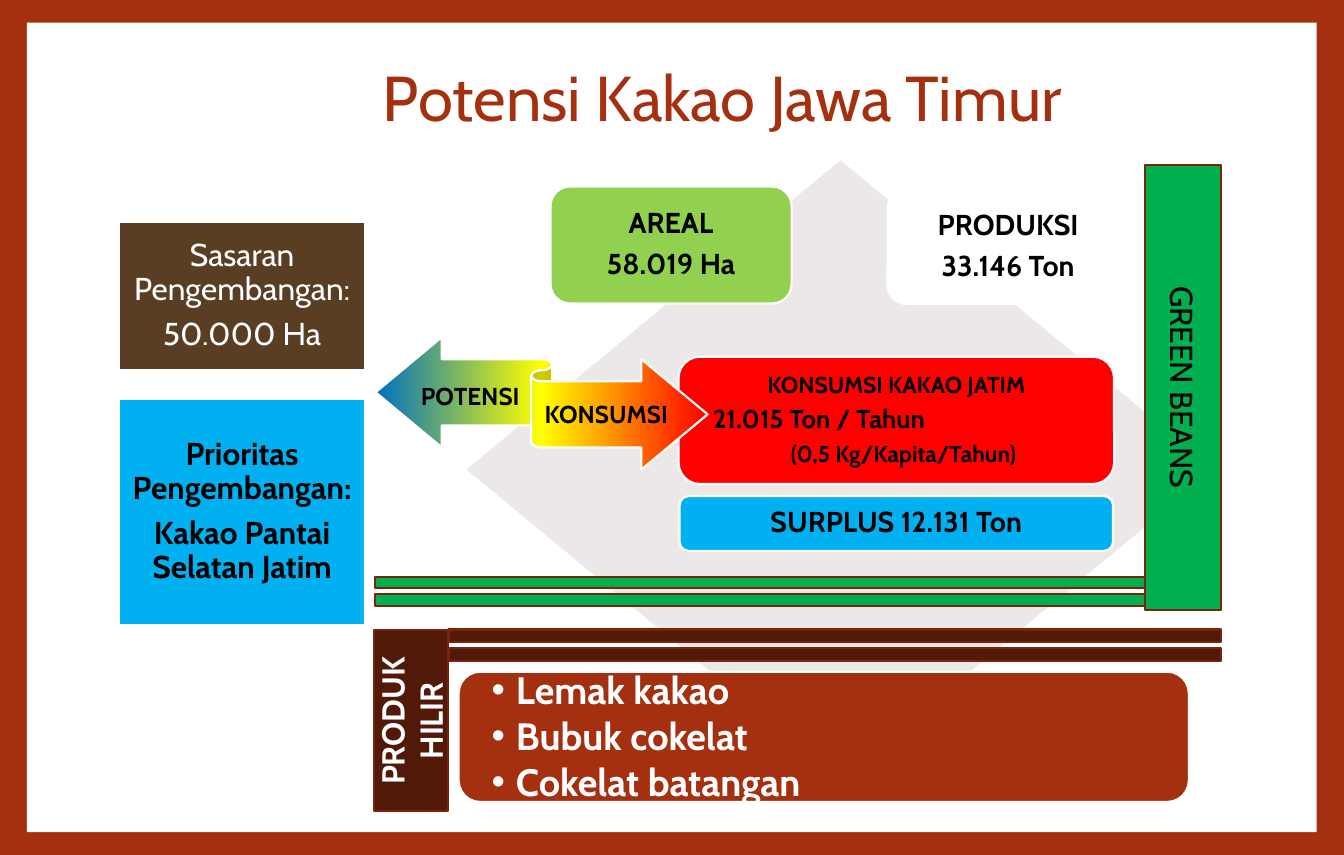
from lxml import etree
from pptx import Presentation
from pptx.dml.color import RGBColor
from pptx.enum import shapes, text
from pptx.oxml import ns
from pptx.util import Pt

FONT = "Cabin"
RUST, DARK_RUST, COCOA = "A5300F", "7A240B", "521808"
WHITE, BLACK, GREEN, BLUE = "FFFFFF", "000000", "00B050", "00B0F0"
KIND = shapes.MSO_SHAPE
ALIGN = text.PP_ALIGN
SLIDE_SIZE = (935.43, 595.28)

# Each shape: kind, (left, top, width, height), fill, line
FRAME = (KIND.RECTANGLE, (18.7, 15.8, 897.8, 563.6), WHITE, None)
DIAMOND = (KIND.DIAMOND, (324.7, 111.6, 520.6, 430.6), "D8D2D1", None)
RIBBON = (KIND.LEFT_RIGHT_RIBBON, (261.4, 234.7, 231.1, 92.2), BLUE, WHITE)
RIBBON_STOPS = [(0, "0070C0"), (50, "FFFF00"), (100, "FF0000")]
GREEN_BARS = (KIND.MATH_EQUAL, (164.2, 394.4, 731.5, 34.6), GREEN, DARK_RUST)
COCOA_BARS = (KIND.MATH_EQUAL, (215.3, 430.6, 731.5, 37.2), COCOA, DARK_RUST)
CONSUMPTION = (KIND.ROUNDED_RECTANGLE, (472.3, 248.4, 303.1, 88.6), "FF0000", WHITE)
PRODUCTS = (KIND.ROUNDED_RECTANGLE, (319.2, 467.7, 508.3, 90.7), RUST, WHITE)
GREEN_BEANS = (KIND.RECTANGLE, (797, 114.9, 52.6, 309.6), GREEN, DARK_RUST)
DOWNSTREAM = (KIND.RECTANGLE, (260.6, 438.9, 51, 126), COCOA, DARK_RUST)

# Shape, lines, size, font colour, bold, inset
CARDS = [
    ((KIND.ROUNDED_RECTANGLE, (383.2, 129.9, 167.8, 81.4), "92D050", WHITE),
     ["AREAL", "58.019 Ha"], 20, BLACK, True, 6),
    ((KIND.ROUNDED_RECTANGLE, (617.8, 131.8, 167.8, 79.9), WHITE, WHITE),
     ["PRODUKSI", "33.146 Ton"], 20, BLACK, True, 6),
    ((KIND.ROUNDED_RECTANGLE, (473, 345.4, 301.7, 38.2), BLUE, WHITE),
     ["SURPLUS 12.131 Ton"], 20, BLACK, True, 6),
    ((KIND.RECTANGLE, (82.8, 154.6, 171.4, 103), "593E24", WHITE),
     ["Sasaran Pengembangan:", "50.000 Ha"], 22, WHITE, False, 6.5),
    ((KIND.RECTANGLE, (82.8, 277.9, 171.4, 157), BLUE, WHITE),
     ["Prioritas Pengembangan:", "Kakao Pantai Selatan Jatim"], 22, BLACK, True, 6.5),
]
CONSUMPTION_LINES = ["KONSUMSI KAKAO JATIM", "21.015 Ton / Tahun", "(0,5 Kg/Kapita/Tahun)"]
PRODUCT_LINES = ["Lemak kakao", "Bubuk cokelat", "Cokelat batangan"]
RIBBON_LABELS = [("POTENSI", (289.2, 254, 76.3, 45.4)),
                 ("KONSUMSI", (377, 266.8, 90, 45.4))]
TITLE = ("Potensi Kakao Jawa Timur", (259.2, 14.4, 560.9, 112.3))


def rgb(value):
    return RGBColor.from_string(value)


def add_block(slide, block):
    kind, box, fill, line = block
    shape = slide.shapes.add_shape(kind, *map(Pt, box))
    shape.shadow.inherit = False
    shape.fill.solid()
    shape.fill.fore_color.rgb = rgb(fill)
    if line:
        shape.line.color.rgb = rgb(line)
        shape.line.width = Pt(1.5)
    else:
        shape.line.fill.background()
    return shape


def write(shape, lines, size, color, bold=False, inset=(7.2, 3.6),
          align=ALIGN.CENTER, spacing=0.9, after=0.35):
    """Fill a shape with paragraphs; after is a share of the font size."""
    frame = shape.text_frame
    frame.word_wrap = True
    frame.vertical_anchor = text.MSO_ANCHOR.MIDDLE
    frame.margin_left = frame.margin_right = Pt(inset[0])
    frame.margin_top = frame.margin_bottom = Pt(inset[1])
    frame.text = "\n".join(lines)
    for paragraph in frame.paragraphs:
        paragraph.alignment = align
        paragraph.line_spacing = spacing
        paragraph.space_after = Pt(size * after)
        for run in paragraph.runs:
            run.font.name = FONT
            run.font.size = Pt(size)
            run.font.bold = bold
            run.font.color.rgb = rgb(color)
    return frame


def indent(paragraph, left, first=0):
    properties = paragraph._p.get_or_add_pPr()
    properties.set("marL", str(Pt(left)))
    properties.set("indent", str(Pt(first)))
    return properties


def set_gradient(shape, stops):
    """Replace the stops of a left-to-right gradient."""
    shape.fill.gradient()
    shape.fill.gradient_angle = 0
    stop_list = shape._element.spPr.find(".//" + ns.qn("a:gsLst"))
    for stop in list(stop_list):
        stop_list.remove(stop)
    for position, color in stops:
        stop = etree.SubElement(stop_list, ns.qn("a:gs"), pos=str(position * 1000))
        etree.SubElement(stop, ns.qn("a:srgbClr"), val=color)


def add_consumption(slide):
    frame = write(add_block(slide, CONSUMPTION), CONSUMPTION_LINES, 16, BLACK, True, (5, 5))
    heading, amount, per_head = frame.paragraphs
    amount.alignment = ALIGN.LEFT
    amount.runs[0].font.size = Pt(18)
    indent(amount, 14.5)
    indent(per_head, 10)


def add_ribbon(slide):
    set_gradient(add_block(slide, RIBBON), RIBBON_STOPS)
    for label, box in RIBBON_LABELS:
        write(slide.shapes.add_textbox(*map(Pt, box)), [label], 17, BLACK, True, (0, 5))


def add_upright(slide, block, label, direction, color, bold):
    shape = add_block(slide, block)
    frame = write(shape, [label], 22.1, color, bold, spacing=1, after=0)
    frame._txBody.bodyPr.set("vert", direction)


def add_products(slide):
    frame = write(add_block(slide, PRODUCTS), PRODUCT_LINES, 26.5, WHITE, True, (18.5, 0),
                  ALIGN.LEFT, spacing=1, after=0)
    frame.margin_bottom = Pt(2)
    for paragraph in frame.paragraphs:
        properties = indent(paragraph, 17, -17)
        etree.SubElement(properties, ns.qn("a:buFont"), typeface="Arial")
        etree.SubElement(properties, ns.qn("a:buChar"), char="•")


def main():
    presentation = Presentation()
    presentation.slide_width, presentation.slide_height = map(Pt, SLIDE_SIZE)
    slide = presentation.slides.add_slide(presentation.slide_layouts[6])
    slide.background.fill.solid()
    slide.background.fill.fore_color.rgb = rgb(RUST)

    add_block(slide, FRAME)
    diamond = add_block(slide, DIAMOND)
    diamond_color = diamond._element.spPr.find(".//" + ns.qn("a:srgbClr"))
    etree.SubElement(diamond_color, ns.qn("a:alpha"), val="50000")
    for block, lines, size, color, bold, inset in CARDS:
        write(add_block(slide, block), lines, size, color, bold, (inset, inset))
    add_consumption(slide)
    add_block(slide, GREEN_BARS)
    add_ribbon(slide)
    add_upright(slide, GREEN_BEANS, "GREEN BEANS", "vert", BLACK, False)
    add_upright(slide, DOWNSTREAM, "PRODUK HILIR", "vert270", WHITE, True)
    add_products(slide)
    add_block(slide, COCOA_BARS)

    title, box = TITLE
    write(slide.shapes.add_textbox(*map(Pt, box)), [title], 44.1, RUST,
          align=ALIGN.LEFT, after=0)
    presentation.save("out.pptx")


if __name__ == "__main__":
    main()
